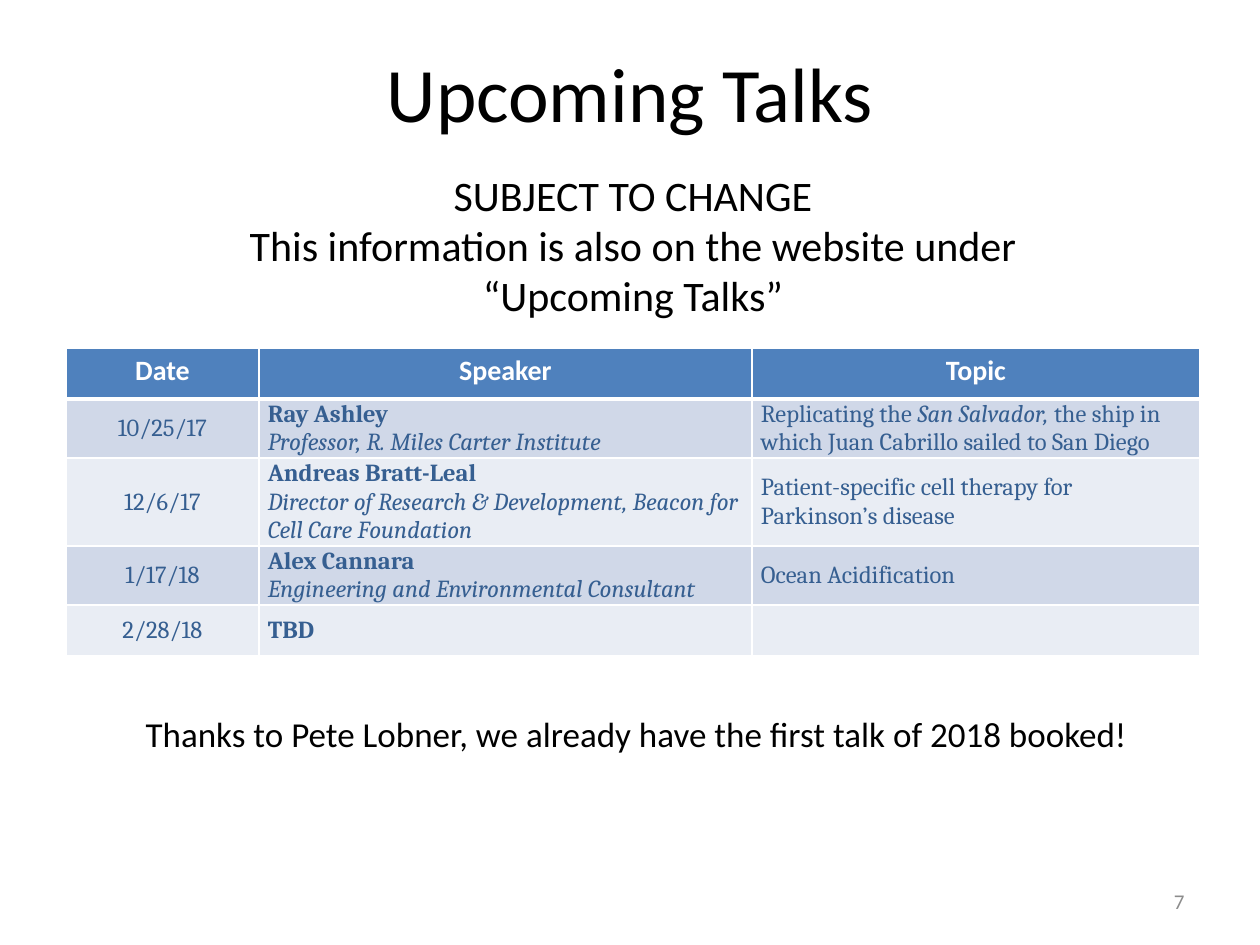
from pptx import Presentation
from pptx.dml.color import RGBColor
from pptx.enum.text import MSO_ANCHOR, PP_ALIGN
from pptx.oxml.ns import qn
from pptx.util import Pt
from lxml.etree import SubElement

PX = 914400 / 126  # EMU in one px
COLORS = {"text": "000000", "number": "8C8C8C", "white": "FFFFFF", "header": "4F81BD",
          "entry": "365F91", "odd": "D0D8E8", "even": "E9EDF4"}

# Content: a paragraph is a list of (text, style) runs
PLAIN, BOLD, ITALIC = {}, {"bold": True}, {"italic": True}
TEXTS = [  # box in px, lines, size, colour, alignment, anchor
    ((0, 13, 1260, 158), ["Upcoming Talks"], 44, "text", "CENTER", "MIDDLE"),
    ((66, 163, 1134, 165), ["SUBJECT TO CHANGE", "This information is also on the website under",
                            "“Upcoming Talks”"], 24, "text", "CENTER", "TOP"),
    ((74, 706, 1125, 55), ["Thanks to Pete Lobner, we already have the first talk of 2018 booked!"],
     20, "text", "CENTER", "TOP"),
    ((903, 876, 294, 50), ["7"], 12, "number", "RIGHT", "MIDDLE"),
]
HEADERS = ["Date", "Speaker", "Topic"]
TALKS = [  # date, speaker, role, topic runs
    ("10/25/17", "Ray Ashley", "Professor, R. Miles Carter Institute",
     [("Replicating the ", PLAIN), ("San Salvador, ", ITALIC),
      ("the ship in which Juan Cabrillo sailed to San Diego", PLAIN)]),
    ("12/6/17", "Andreas Bratt-Leal",
     "Director of Research & Development, Beacon for Cell Care Foundation",
     [("Patient-specific cell therapy for Parkinson’s disease", PLAIN)]),
    ("1/17/18", "Alex Cannara", "Engineering and Environmental Consultant",
     [("Ocean Acidification", PLAIN)]),
    ("2/28/18", "TBD", None, []),
]
TABLE_LEFT, TABLE_TOP, ROW_HEIGHT = 66, 348, 51
COLUMN_WIDTHS = [193, 493, 448]


def px(n):
    return round(n * PX)


def rgb(name):
    return RGBColor.from_string(COLORS[name])


def write(tf, paragraphs, font, size, color, align):
    for i, runs in enumerate(paragraphs):
        p = tf.paragraphs[0] if i == 0 else tf.add_paragraph()
        p.alignment = PP_ALIGN[align]
        for text, style in runs:
            r = p.add_run()
            r.text = text
            values = {"name": font, "size": Pt(size), "bold": False, "italic": False, **style}
            for key, value in values.items():
                setattr(r.font, key, value)
            r.font.color.rgb = rgb(color)


def format_cell(cell, fill, bottom=1):
    tc_pr = cell._tc.get_or_add_tcPr()
    for side, width in {"L": 1, "R": 1, "T": 1, "B": bottom}.items():
        line = SubElement(tc_pr, qn(f"a:ln{side}"), w=str(Pt(width)))
        SubElement(SubElement(line, qn("a:solidFill")), qn("a:srgbClr"), val=COLORS["white"])
    cell.fill.solid()
    cell.fill.fore_color.rgb = rgb(fill)


prs = Presentation()
prs.slide_width, prs.slide_height = px(1260), px(945)
s = prs.slides.add_slide(prs.slide_layouts[6])

# Title, notices and slide number
for box, lines, size, color, align, anchor in TEXTS:
    tf = s.shapes.add_textbox(*map(px, box)).text_frame
    tf.word_wrap = True
    tf.vertical_anchor = MSO_ANCHOR[anchor]
    write(tf, [[(line, PLAIN)] for line in lines], "Calibri", size, color, align)

# Table of talks
row_count = len(TALKS) + 1
table = s.shapes.add_table(row_count, len(HEADERS), px(TABLE_LEFT), px(TABLE_TOP),
                           px(sum(COLUMN_WIDTHS)), px(ROW_HEIGHT * row_count)).table
for column, width in zip(table.columns, COLUMN_WIDTHS):
    column.width = px(width)

for c, header in enumerate(HEADERS):
    cell = table.cell(0, c)
    format_cell(cell, "header", bottom=3)
    write(cell.text_frame, [[(header, BOLD)]], "Calibri", 16, "white", "CENTER")

for r, (date, speaker, role, topic) in enumerate(TALKS, start=1):
    speaker_lines = [[(speaker, BOLD)]] + ([[(role, ITALIC)]] if role else [])
    for c, paragraphs in enumerate([[[(date, PLAIN)]], speaker_lines, [topic]]):
        cell = table.cell(r, c)
        format_cell(cell, "odd" if r % 2 else "even", bottom=1)
        cell.vertical_anchor = MSO_ANCHOR.MIDDLE
        cell.margin_left = cell.margin_right = px(9)
        cell.margin_top = cell.margin_bottom = 0
        write(cell.text_frame, paragraphs, "Cambria", 14, "entry", "LEFT" if c else "CENTER")

prs.save("out.pptx")
